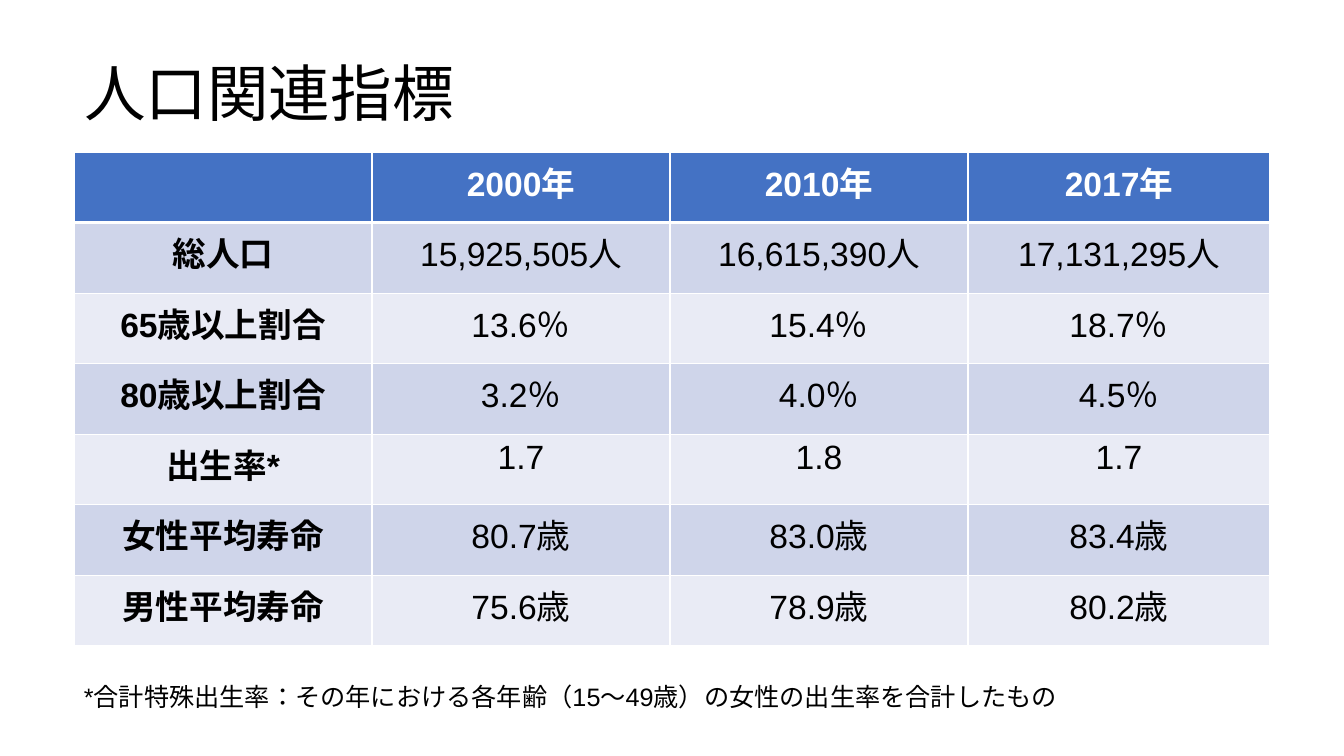
from lxml.etree import SubElement
from pptx import Presentation
from pptx.dml.color import RGBColor
from pptx.enum.lang import MSO_LANGUAGE_ID as Language
from pptx.enum.text import MSO_ANCHOR as Anchor, MSO_AUTO_SIZE as AutoSize, PP_ALIGN as Align
from pptx.oxml.ns import qn
from pptx.util import Pt

EMU_PER_PX = 914400 / 100.8


def px(length):
    return round(length * EMU_PER_PX)


def write(frame, text, size, color="000000", bold=False, align=Align.LEFT, spacing=1.0):
    paragraph = frame.paragraphs[0]
    paragraph.alignment = align
    paragraph.line_spacing = spacing
    run = paragraph.add_run()
    run.text = text
    run.font.name = "Arial"
    run.font.size = Pt(size)
    run.font.bold = bold
    run.font.language_id = Language.JAPANESE
    run.font.color.rgb = RGBColor.from_string(color)


presentation = Presentation()
presentation.slide_width = px(1344)
presentation.slide_height = px(756)
slide = presentation.slides.add_slide(presentation.slide_layouts[5])

title = slide.shapes.title
title.left, title.top, title.width, title.height = px(74), px(24), px(1159), px(146)
title.text_frame.vertical_anchor = Anchor.MIDDLE
title.text_frame.auto_size = AutoSize.NONE
write(title.text_frame, "人口関連指標", 44, spacing=0.9)

indicators = [
    ["", "2000年", "2010年", "2017年"],
    ["総人口", "15,925,505人", "16,615,390人", "17,131,295人"],
    ["65歳以上割合", "13.6％", "15.4％", "18.7％"],
    ["80歳以上割合", "3.2％", "4.0％", "4.5％"],
    ["出生率*", "1.7", "1.8", "1.7"],
    ["女性平均寿命", "80.7歳", "83.0歳", "83.4歳"],
    ["男性平均寿命", "75.6歳", "78.9歳", "80.2歳"],
]
column_widths = [298, 298, 298, 302]
table = slide.shapes.add_table(
    len(indicators), len(column_widths), px(74), px(152), px(sum(column_widths)), px(494)
).table
for column, width in zip(table.columns, column_widths):
    column.width = px(width)

for row_index, values in enumerate(indicators):
    is_header = row_index == 0
    row_fill = "4472C4" if is_header else "CFD5EA" if row_index % 2 else "E9EBF5"
    thick_side = {0: "lnB", 1: "lnT"}.get(row_index)
    for column_index, value in enumerate(values):
        cell = table.cell(row_index, column_index)
        properties = cell._tc.get_or_add_tcPr()
        for side in ("lnL", "lnR", "lnT", "lnB"):
            line_width = Pt(3 if side == thick_side else 1)
            border = SubElement(properties, qn(f"a:{side}"), w=str(line_width))
            SubElement(SubElement(border, qn("a:solidFill")), qn("a:srgbClr"), val="FFFFFF")
        cell.fill.solid()
        cell.fill.fore_color.rgb = RGBColor.from_string(row_fill)
        if value:
            write(
                cell.text_frame, value, 24,
                color="FFFFFF" if is_header else "000000",
                bold=is_header or column_index == 0,
                align=Align.CENTER,
            )

footnote = slide.shapes.add_textbox(px(74), px(676), px(1160), px(40))
footnote.text_frame.word_wrap = True
footnote.text_frame.auto_size = AutoSize.SHAPE_TO_FIT_TEXT
write(footnote.text_frame, "*合計特殊出生率：その年における各年齢（15～49歳）の女性の出生率を合計したもの", 18)

presentation.save("out.pptx")
